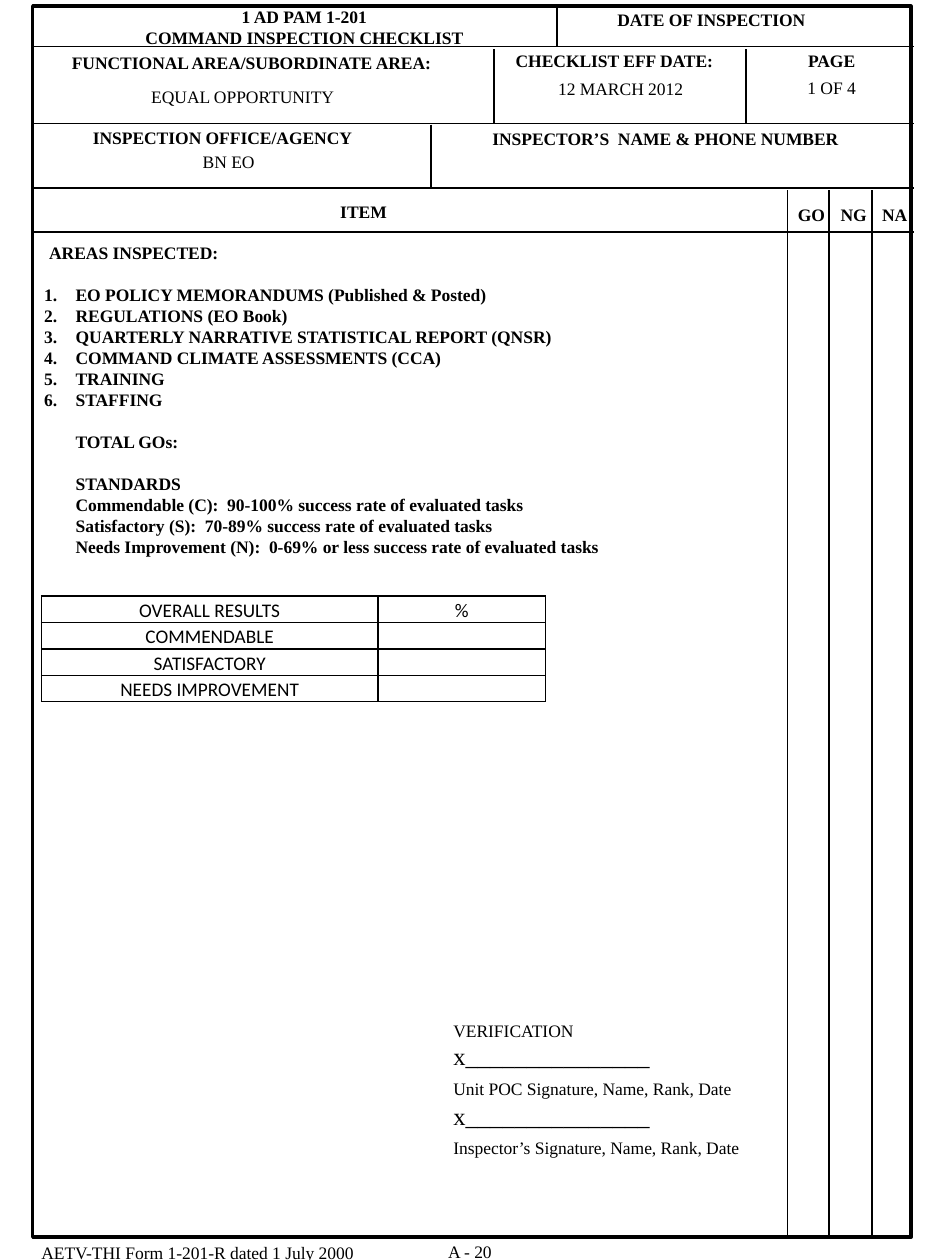
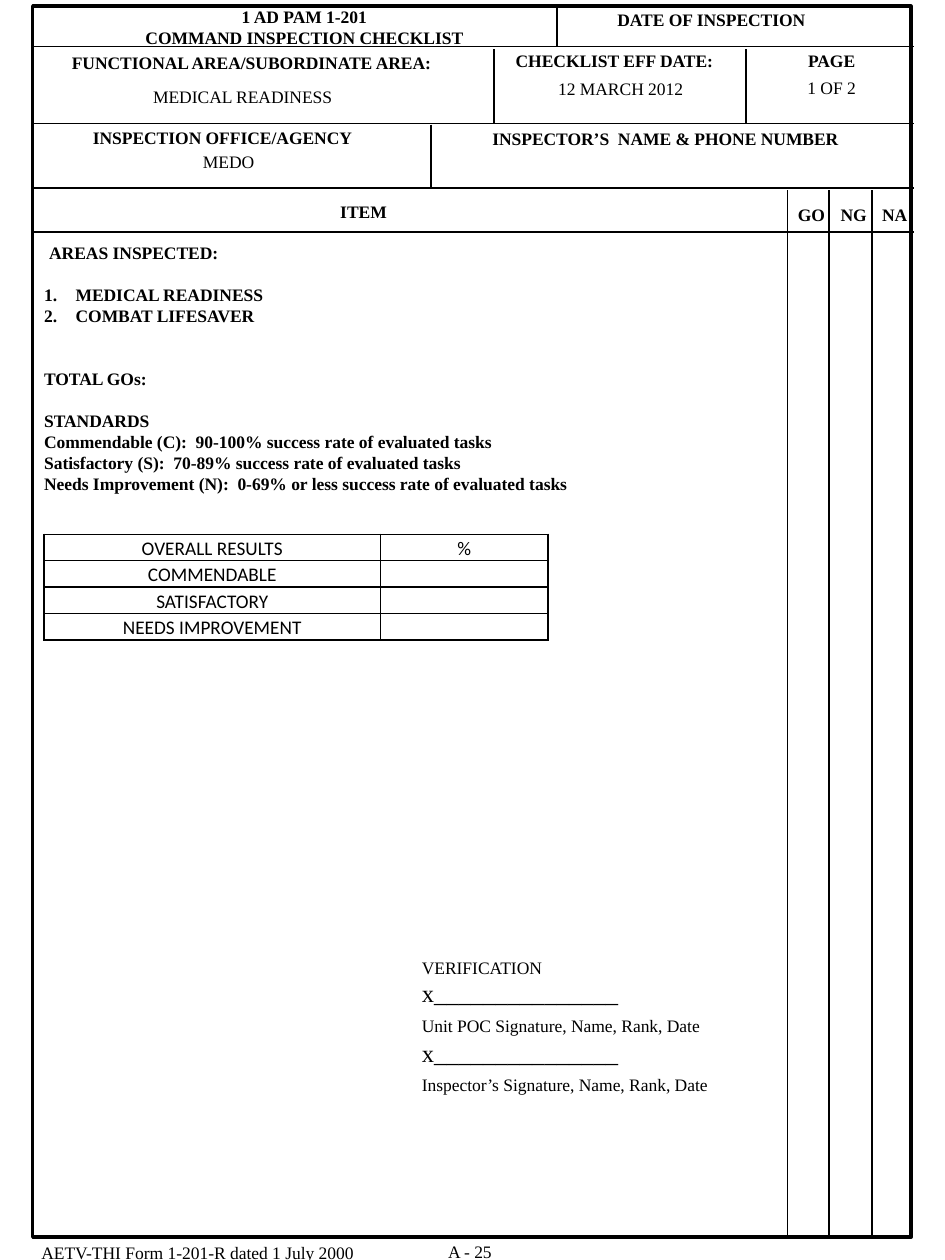
from lxml import etree
from pptx import Presentation
from pptx.dml.color import RGBColor
from pptx.enum.shapes import MSO_CONNECTOR, MSO_SHAPE
from pptx.enum.text import MSO_ANCHOR, MSO_AUTO_SIZE, PP_ALIGN
from pptx.oxml.ns import qn
from pptx.util import Inches, Pt

LEFT, CENTER = PP_ALIGN.LEFT, PP_ALIGN.CENTER
TOP, BOTTOM = MSO_ANCHOR.TOP, MSO_ANCHOR.BOTTOM
NO_FIT = MSO_AUTO_SIZE.NONE
STRAIGHT, RECTANGLE = MSO_CONNECTOR.STRAIGHT, MSO_SHAPE.RECTANGLE

COLORS = {"ink": "000000"}
FORM_FONT, TABLE_FONT = "Times New Roman", "Calibri"
TITLE_AND_CONTENT = 1
LINE = 12  # points from one form line to the next

FRAME = (0.26, 0.05, 6.97, 9.77)
RULES = [(0.26, y, 7.25, y) for y in (0.37, 0.98, 1.49, 1.84)]
DIVIDERS = [(4.42, 0.05, 4.42, 0.37), (3.92, 0.39, 3.92, 0.98),
            (5.92, 0.39, 5.92, 0.98), (3.42, 0.99, 3.42, 1.49)]
SCORE_COLUMNS = [(x, 1.51, x, 9.82) for x in (6.25, 6.58, 6.92)]

# text, left, top, width
HEADINGS = [
    ("DATE OF INSPECTION", 4.79, 0.02, 1.71),
    ("FUNCTIONAL AREA/SUBORDINATE AREA:", 0.43, 0.36, 3.13),
    ("CHECKLIST EFF DATE:", 3.98, 0.35, 1.79),
    ("PAGE", 6.06, 0.35, 1.08),
    ("INSPECTION OFFICE/AGENCY", 0.6, 0.96, 2.33),
    ("INSPECTOR’S  NAME & PHONE NUMBER", 3.8, 0.97, 2.96),
    ("ITEM", 2.6, 1.55, 0.57),
    ("GO", 6.23, 1.57, 0.42),
    ("NG", 6.57, 1.57, 0.41),
    ("NA", 6.9, 1.57, 0.4),
]
STANDARDS = [
    "Commendable (C):  90-100% success rate of evaluated tasks",
    "Satisfactory (S):  70-89% success rate of evaluated tasks",
    "Needs Improvement (N):  0-69% or less success rate of evaluated tasks",
]
RESULTS = ["OVERALL RESULTS", "COMMENDABLE", "SATISFACTORY", "NEEDS IMPROVEMENT"]
SIGNERS = ["Unit POC Signature, Name, Rank, Date",
           "Inspector’s Signature, Name, Rank, Date"]

CHECKLISTS = [
    {
        "area": "EQUAL OPPORTUNITY", "page": "1 OF 4", "office": "BN EO",
        "footer": "A - 20",
        "items": ["EO POLICY MEMORANDUMS (Published & Posted)",
                  "REGULATIONS (EO Book)",
                  "QUARTERLY NARRATIVE STATISTICAL REPORT (QNSR)",
                  "COMMAND CLIMATE ASSESSMENTS (CCA)", "TRAINING", "STAFFING"],
        "standards_indent": 0.25, "total_gap": LINE,
        "results_at": (0.33, 4.73), "verification_at": (3.5, 8.05),
    },
    {
        "area": "MEDICAL READINESS", "page": "1 OF 2", "office": "MEDO",
        "footer": "A - 25",
        "items": ["MEDICAL READINESS", "COMBAT LIFESAVER"],
        "standards_indent": 0, "total_gap": 2 * LINE,
        "results_at": (0.35, 4.24), "verification_at": (3.25, 7.55),
    },
]


def write(paragraph, text, size=10, bold=False, font=FORM_FONT, align=LEFT,
          before=0, after=0):
    paragraph.alignment = align
    paragraph.space_before, paragraph.space_after = Pt(before), Pt(after)
    run = paragraph.add_run()
    run.text = text
    run.font.size, run.font.bold, run.font.name = Pt(size), bold, font
    run.font.color.rgb = RGBColor.from_string(COLORS["ink"])


def set_list_style(paragraph, margin=0, numbered=False):
    """Set the left margin, with a hanging number or with no bullet."""
    props = paragraph._p.get_or_add_pPr()
    props.set("marL", str(Inches(margin)))
    props.set("indent", str(Inches(-margin if numbered else 0)))
    if numbered:
        etree.SubElement(props, qn("a:buFont"), typeface=FORM_FONT)
        etree.SubElement(props, qn("a:buAutoNum"), type="arabicPeriod")
    else:
        etree.SubElement(props, qn("a:buNone"))


def set_borders(cell, width=1):
    props = cell._tc.get_or_add_tcPr()
    for index, side in enumerate(("lnL", "lnR", "lnT", "lnB")):
        border = etree.Element(qn(f"a:{side}"), w=str(Pt(width)))
        fill = etree.SubElement(border, qn("a:solidFill"))
        etree.SubElement(fill, qn("a:srgbClr"), val=COLORS["ink"])
        props.insert(index, border)


def paragraphs_of(frame):
    """Yield the first paragraph of a frame, then new ones."""
    yield frame.paragraphs[0]
    while True:
        yield frame.add_paragraph()


class ChecklistForm:
    def __init__(self):
        self.deck = Presentation()
        self.deck.slide_width, self.deck.slide_height = Inches(7.5), Inches(10)
        self.slide = None

    def new_page(self):
        layout = self.deck.slide_layouts[TITLE_AND_CONTENT]
        self.slide = self.deck.slides.add_slide(layout)

    def placeholder(self, holder, left, top, width, height):
        holder.left, holder.top = Inches(left), Inches(top)
        holder.width, holder.height = Inches(width), Inches(height)
        frame = holder.text_frame
        frame.auto_size, frame.vertical_anchor = NO_FIT, TOP
        return frame

    def title(self, *lines):
        frame = self.placeholder(self.slide.shapes.title, 1.05, 0, 2.73, 0.43)
        frame.word_wrap = False
        for paragraph, line in zip(paragraphs_of(frame), lines):
            write(paragraph, line, bold=True, align=CENTER)

    def frame(self, left, top, width, height):
        border = self.slide.shapes.add_shape(
            RECTANGLE, Inches(left), Inches(top), Inches(width), Inches(height))
        border.shadow.inherit = False
        border.fill.background()
        border.line.color.rgb = RGBColor.from_string(COLORS["ink"])
        border.line.width = Pt(2)

    def rule(self, *ends):
        rule = self.slide.shapes.add_connector(STRAIGHT, *map(Inches, ends))
        rule.line.color.rgb = RGBColor.from_string(COLORS["ink"])
        rule.line.width = Pt(1)
        etree.SubElement(rule._element.spPr, qn("a:effectLst"))

    def text_box(self, left, top, width, height=0.27):
        box = self.slide.shapes.add_textbox(
            Inches(left), Inches(top), Inches(width), Inches(height))
        box.text_frame.word_wrap = False
        return box.text_frame

    def label(self, text, left, top, width, bold=False, align=CENTER):
        frame = self.text_box(left, top, width)
        write(frame.paragraphs[0], text, bold=bold, align=align)

    def areas(self, items, standards_indent, total_gap):
        frame = self.placeholder(self.slide.placeholders[1], 0.25, 1.87, 5.97, 2.8)
        indent = standards_indent
        # text, space before, margin, numbered
        lines = [("AREAS INSPECTED:", 0, 0.04, False)]
        lines += [(item, 0 if number else LINE, 0.25, True)
                  for number, item in enumerate(items)]
        lines += [("TOTAL GOs:", total_gap, indent, False),
                  ("STANDARDS", LINE, indent, False)]
        lines += [(standard, 0, indent, False) for standard in STANDARDS]
        for paragraph, line in zip(paragraphs_of(frame), lines):
            text, before, margin, numbered = line
            write(paragraph, text, bold=True, before=before)
            set_list_style(paragraph, margin, numbered)

    def results(self, left, top, row_height=0.21):
        widths = (2.67, 1.33)
        table = self.slide.shapes.add_table(
            len(RESULTS), len(widths), Inches(left), Inches(top),
            Inches(sum(widths)), Inches(row_height * len(RESULTS))).table
        table.first_row = table.horz_banding = False
        for column, width in zip(table.columns, widths):
            column.width = Inches(width)
        for index, name in enumerate(RESULTS):
            table.rows[index].height = Inches(row_height)
            for cell, text in zip(table.rows[index].cells,
                                  (name, "" if index else "%")):
                cell.margin_left = cell.margin_right = Inches(0.07)
                cell.margin_top = cell.margin_bottom = 0
                cell.vertical_anchor = BOTTOM
                cell.fill.background()
                set_borders(cell)
                paragraph = cell.text_frame.paragraphs[0]
                if text:
                    write(paragraph, text, size=11, font=TABLE_FONT, align=CENTER)
                else:
                    etree.SubElement(paragraph._p, qn("a:endParaRPr"), sz="1100")

    def verification(self, left, top):
        lines = paragraphs_of(self.text_box(left, top, 2.6, 1.2))
        write(next(lines), "VERIFICATION")
        for signer in SIGNERS:
            write(next(lines), "x_______________", size=14)
            write(next(lines), signer, before=4, after=1)

    def add_checklist(self, content):
        self.new_page()
        self.title("1 AD PAM 1-201", "COMMAND INSPECTION CHECKLIST")
        self.frame(*FRAME)
        for ends in RULES + DIVIDERS + SCORE_COLUMNS:
            self.rule(*ends)
        for heading in HEADINGS:
            self.label(*heading, bold=True)
        self.label("AETV-THI Form 1-201-R dated 1 July 2000", 0.23, 9.81, 2.7,
                   align=LEFT)
        self.label(content["footer"], 3.41, 9.8, 0.64)
        self.areas(content["items"], content["standards_indent"],
                   content["total_gap"])
        self.label(content["office"], 0.23, 1.15, 3.17)
        self.label(content["page"], 6.06, 0.56, 1.08)
        self.label("12 MARCH 2012", 4.32, 0.57, 1.21)
        self.label(content["area"], 1.1, 0.63, 1.65)
        self.results(*content["results_at"])
        self.verification(*content["verification_at"])


def main():
    form = ChecklistForm()
    for content in CHECKLISTS:
        form.add_checklist(content)
    form.deck.save("out.pptx")


if __name__ == "__main__":
    main()
